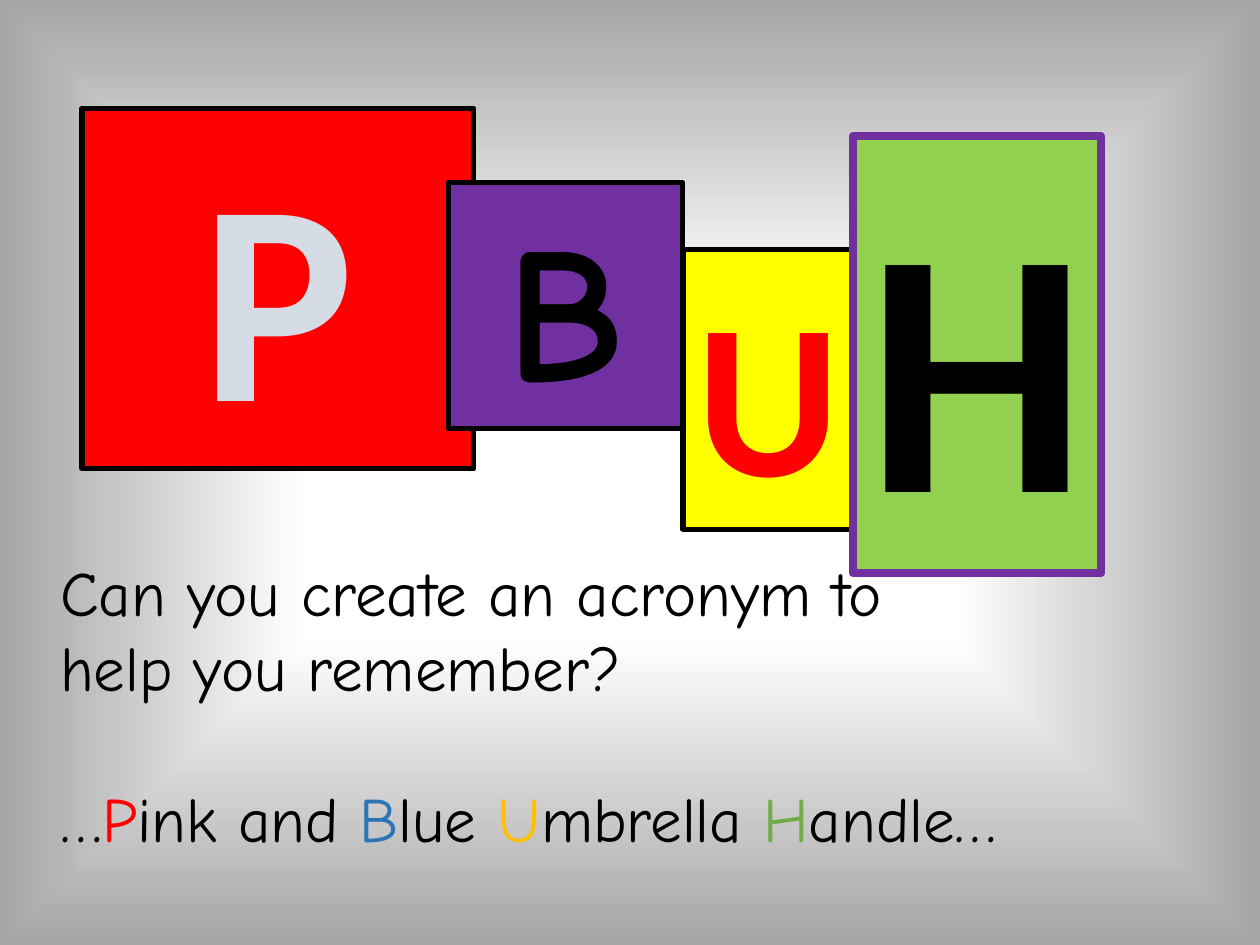
from lxml import etree
from pptx import Presentation
from pptx.dml.color import RGBColor
from pptx.enum.dml import MSO_PATTERN
from pptx.enum.shapes import MSO_SHAPE
from pptx.enum.text import MSO_ANCHOR, MSO_AUTO_SIZE, PP_ALIGN
from pptx.oxml.ns import qn
from pptx.util import Inches, Pt

RECTANGLE = MSO_SHAPE.RECTANGLE
DIAGONAL = MSO_PATTERN.DARK_UPWARD_DIAGONAL
GROW = MSO_AUTO_SIZE.SHAPE_TO_FIT_TEXT
TOP = MSO_ANCHOR.TOP
CENTER = PP_ALIGN.CENTER

COLORS = {
    "black": "000000", "white": "FFFFFF", "gray": "A5A5A5",
    "red": "FF0000", "purple": "7030A0", "yellow": "FFFF00", "lime": "92D050",
    "blue": "2E75B6", "gold": "FFC000", "green": "70AD47",
    "slate": "44546A", "pale slate": "D6DCE5", "dark slate": "333F50",
}
BACKGROUND_STOPS = [(0, "white"), (35, "white"), (100, "gray")]

# letter, (left, top, width, height), fill, line, line width,
# font, size, text color (None = pattern), outline color, outline width, wrap
LETTER_CARDS = [
    ("P", (0.65, 0.86, 3.11, 2.86), "red", "black", 3,
     "Calibri", 164, None, "dark slate", 1, True),
    ("B", (3.56, 1.45, 1.86, 1.95), "purple", "black", 3,
     "Comic Neue", 110, "black", "white", 0.75, False),
    ("U", (5.42, 1.98, 1.36, 2.22), "yellow", "black", 3,
     "Calibri", 126, "red", "white", 0.75, False),
    ("H", (6.77, 1.08, 1.97, 3.47), "lime", "purple", 4.5,
     "Calibri", 200, "black", "white", 0.75, False),
]
QUESTION = [("Can you create an acronym to help you remember?", "black")]
ANSWER = [
    ("…", "black"), ("P", "red"), ("ink and ", "black"), ("B", "blue"),
    ("lue ", "black"), ("U", "gold"), ("mbrella ", "black"),
    ("H", "green"), ("andle…", "black"),
]
PROMPT_BOX = (0.38, 4.34, 7.68, 3.13)
PROMPT_SIZE = 36
ANSWER_GAP = 43


def rgb(name):
    return RGBColor.from_string(COLORS[name])


def paint_background(slide):
    """Fill the slide with a rectangular gradient around its centre."""
    slide.background.fill.gradient()
    gradient = slide.element.find(".//" + qn("a:gradFill"))
    for child in list(gradient):
        gradient.remove(child)
    stops = etree.SubElement(gradient, qn("a:gsLst"))
    for percent, color in BACKGROUND_STOPS:
        stop = etree.SubElement(stops, qn("a:gs"), pos=str(percent * 1000))
        etree.SubElement(stop, qn("a:srgbClr"), val=COLORS[color])
    shade = etree.SubElement(gradient, qn("a:path"), {"path": "rect"})
    etree.SubElement(shade, qn("a:fillToRect"),
                     {side: "50000" for side in "ltrb"})


def outline_text(run, color, width):
    line = etree.Element(qn("a:ln"), w=str(Pt(width)))
    fill = etree.SubElement(line, qn("a:solidFill"))
    etree.SubElement(fill, qn("a:srgbClr"), val=COLORS[color])
    run.font._element.insert(0, line)


def add_letter_card(slide, letter, box, fill, line, line_width, font_name,
                    size, color, outline, outline_width, wrap):
    card = slide.shapes.add_shape(RECTANGLE, *map(Inches, box))
    card.shadow.inherit = False
    card.fill.solid()
    card.fill.fore_color.rgb = rgb(fill)
    card.line.color.rgb = rgb(line)
    card.line.width = Pt(line_width)

    text_frame = card.text_frame
    text_frame.text = letter
    text_frame.word_wrap = wrap
    text_frame.auto_size = GROW
    text_frame.vertical_anchor = TOP
    paragraph = text_frame.paragraphs[0]
    paragraph.alignment = CENTER
    run = paragraph.runs[0]
    font = run.font
    font.name, font.size, font.bold = font_name, Pt(size), True
    if color:
        font.color.rgb = rgb(color)
    else:
        font.fill.patterned()
        font.fill.pattern = DIAGONAL
        font.fill.fore_color.rgb = rgb("slate")
        font.fill.back_color.rgb = rgb("pale slate")
    outline_text(run, outline, outline_width)


def add_colored_runs(paragraph, pieces):
    for text, color in pieces:
        run = paragraph.add_run()
        run.text = text
        run.font.name = "Comic Neue"
        run.font.size = Pt(PROMPT_SIZE)
        run.font.color.rgb = rgb(color)


def add_prompt(slide):
    text_frame = slide.shapes.add_textbox(*map(Inches, PROMPT_BOX)).text_frame
    text_frame.word_wrap = True
    text_frame.auto_size = GROW
    add_colored_runs(text_frame.paragraphs[0], QUESTION)
    answer = text_frame.add_paragraph()
    answer.space_before = Pt(ANSWER_GAP)
    add_colored_runs(answer, ANSWER)


def main():
    presentation = Presentation()
    presentation.slide_width = Inches(10)
    presentation.slide_height = Inches(7.5)
    slide = presentation.slides.add_slide(presentation.slide_layouts[6])
    paint_background(slide)
    for card in LETTER_CARDS:
        add_letter_card(slide, *card)
    add_prompt(slide)
    presentation.save("out.pptx")


if __name__ == "__main__":
    main()
